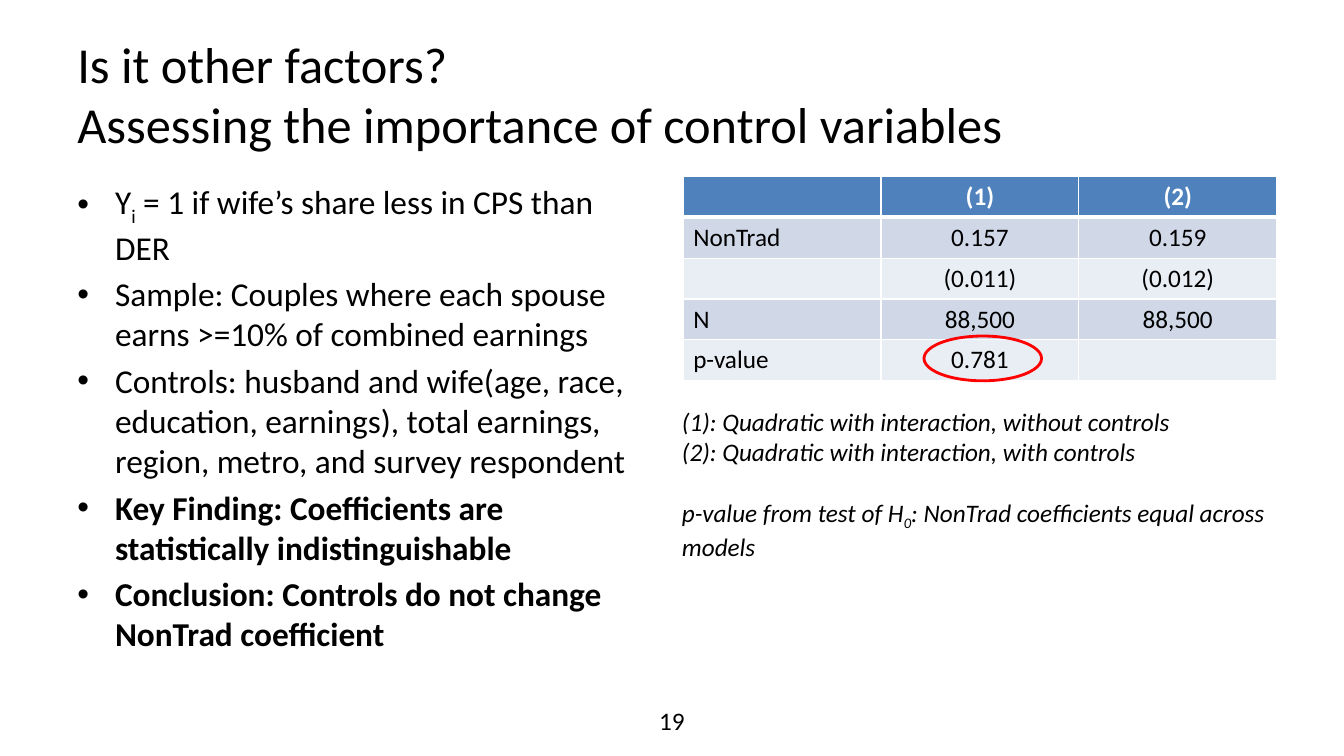
from lxml import etree
from pptx import Presentation
from pptx.dml.color import RGBColor
from pptx.enum import shapes, text
from pptx.oxml import ns
from pptx.util import Pt

BLACK = RGBColor(0x00, 0x00, 0x00)
WHITE = RGBColor(0xFF, 0xFF, 0xFF)
RED = RGBColor(0xFF, 0x00, 0x00)
HEADER_BLUE = RGBColor(0x4F, 0x81, 0xBD)
BAND_DARK = RGBColor(0xD0, 0xD8, 0xE8)
BAND_LIGHT = RGBColor(0xE9, 0xED, 0xF4)
FONT = "Calibri"

TITLE_LINES = ["Is it other factors?", "Assessing the importance of control variables"]
FINDINGS = [
    (["Y", ("i",), " = 1 if wife’s share less in CPS than DER"], False),
    (["Sample: Couples where each spouse earns >=10% of combined earnings"], False),
    (["Controls: husband and wife(age, race, education, earnings), "
      "total earnings, region, metro, and survey respondent"], False),
    (["Key Finding: Coefficients are statistically indistinguishable"], True),
    (["Conclusion: Controls do not change NonTrad coefficient"], True),
]
ESTIMATES = [
    ["", "(1)", "(2)"],
    ["NonTrad", "0.157", "0.159"],
    ["", "(0.011)", "(0.012)"],
    ["N", "88,500", "88,500"],
    ["p-value", "0.781", ""],
]
NOTES = [
    (["(1): Quadratic with interaction, without controls"], 0),
    (["(2): Quadratic with interaction, with controls"], 0),
    (["p-value from test of H", ("0",), ": NonTrad coefficients equal across models"], 21.6),
]


def add_runs(paragraph, parts, size, color=BLACK, bold=False, italic=False):
    for part in parts:
        subscript = isinstance(part, tuple)
        run = paragraph.add_run()
        run.text = part[0] if subscript else part
        run.font.name = FONT
        run.font.size = Pt(size)
        run.font.color.rgb = color
        run.font.bold = bold
        run.font.italic = italic
        if subscript:
            run.font._element.set("baseline", "-25000")


def next_paragraph(frame, index):
    return frame.add_paragraph() if index else frame.paragraphs[0]


def place(holder, left, top, width, height):
    holder.left, holder.top = Pt(left), Pt(top)
    holder.width, holder.height = Pt(width), Pt(height)
    holder.text_frame.word_wrap = True
    holder.text_frame.auto_size = text.MSO_AUTO_SIZE.NONE


def fill_title(title):
    place(title, 48, 21.6, 864, 90)
    title.text_frame.vertical_anchor = text.MSO_ANCHOR.MIDDLE
    heading = title.text_frame.paragraphs[0]
    heading.alignment = text.PP_ALIGN.LEFT
    for index, line in enumerate(TITLE_LINES):
        if index:
            heading.add_line_break()
        add_runs(heading, [line], 36)


def fill_findings(body):
    place(body, 48, 126, 424, 356.4)
    for index, (parts, bold) in enumerate(FINDINGS):
        finding = next_paragraph(body.text_frame, index)
        if index == 0:
            finding.space_before = Pt(0)
        add_runs(finding, parts, 23.8, bold=bold)


def add_border(cell, side, width):
    border = etree.SubElement(cell._tc.get_or_add_tcPr(), ns.qn(f"a:ln{side}"), w=str(Pt(width)))
    paint = etree.SubElement(border, ns.qn("a:solidFill"))
    etree.SubElement(paint, ns.qn("a:srgbClr"), val=str(WHITE))


def add_estimates(slide):
    row_count, column_count = len(ESTIMATES), len(ESTIMATES[0])
    table = slide.shapes.add_table(
        row_count, column_count, Pt(488), Pt(126), Pt(424), Pt(146)).table
    for r, values in enumerate(ESTIMATES):
        header = r == 0
        for c, value in enumerate(values):
            cell = table.cell(r, c)
            for side in "LRTB":
                heavy = (header and side == "B") or (r == 1 and side == "T")
                add_border(cell, side, 3 if heavy else 1)
            cell.fill.solid()
            cell.fill.fore_color.rgb = HEADER_BLUE if header else BAND_DARK if r % 2 else BAND_LIGHT
            if value:
                entry = cell.text_frame.paragraphs[0]
                entry.alignment = text.PP_ALIGN.CENTER if c else text.PP_ALIGN.LEFT
                add_runs(entry, [value], 18, WHITE if header else BLACK, bold=header)


def add_text_box(slide, left, top, width, height):
    box = slide.shapes.add_textbox(Pt(left), Pt(top), Pt(width), Pt(height))
    box.text_frame.word_wrap = True
    return box.text_frame


def add_notes(slide):
    frame = add_text_box(slide, 480, 286.6, 456, 116.6)
    for index, (parts, gap) in enumerate(NOTES):
        note = next_paragraph(frame, index)
        note.space_before = Pt(gap)
        add_runs(note, parts, 18, italic=True)


def add_page_number(slide):
    number = add_text_box(slide, 368, 500.4, 224, 28.8).paragraphs[0]
    number.alignment = text.PP_ALIGN.CENTER
    add_runs(number, ["19"], 18)


def add_highlight(slide):
    ring = slide.shapes.add_shape(
        shapes.MSO_SHAPE.OVAL, Pt(660), Pt(240), Pt(84), Pt(32))
    ring.shadow.inherit = False
    ring.fill.background()
    ring.line.color.rgb = RED
    ring.line.width = Pt(2)


def main():
    deck = Presentation()
    deck.slide_width, deck.slide_height = Pt(960), Pt(540)
    slide = deck.slides.add_slide(deck.slide_layouts[1])
    fill_title(slide.shapes.title)
    fill_findings(slide.placeholders[1])
    add_estimates(slide)
    add_page_number(slide)
    add_notes(slide)
    add_highlight(slide)
    deck.save("out.pptx")


if __name__ == "__main__":
    main()
